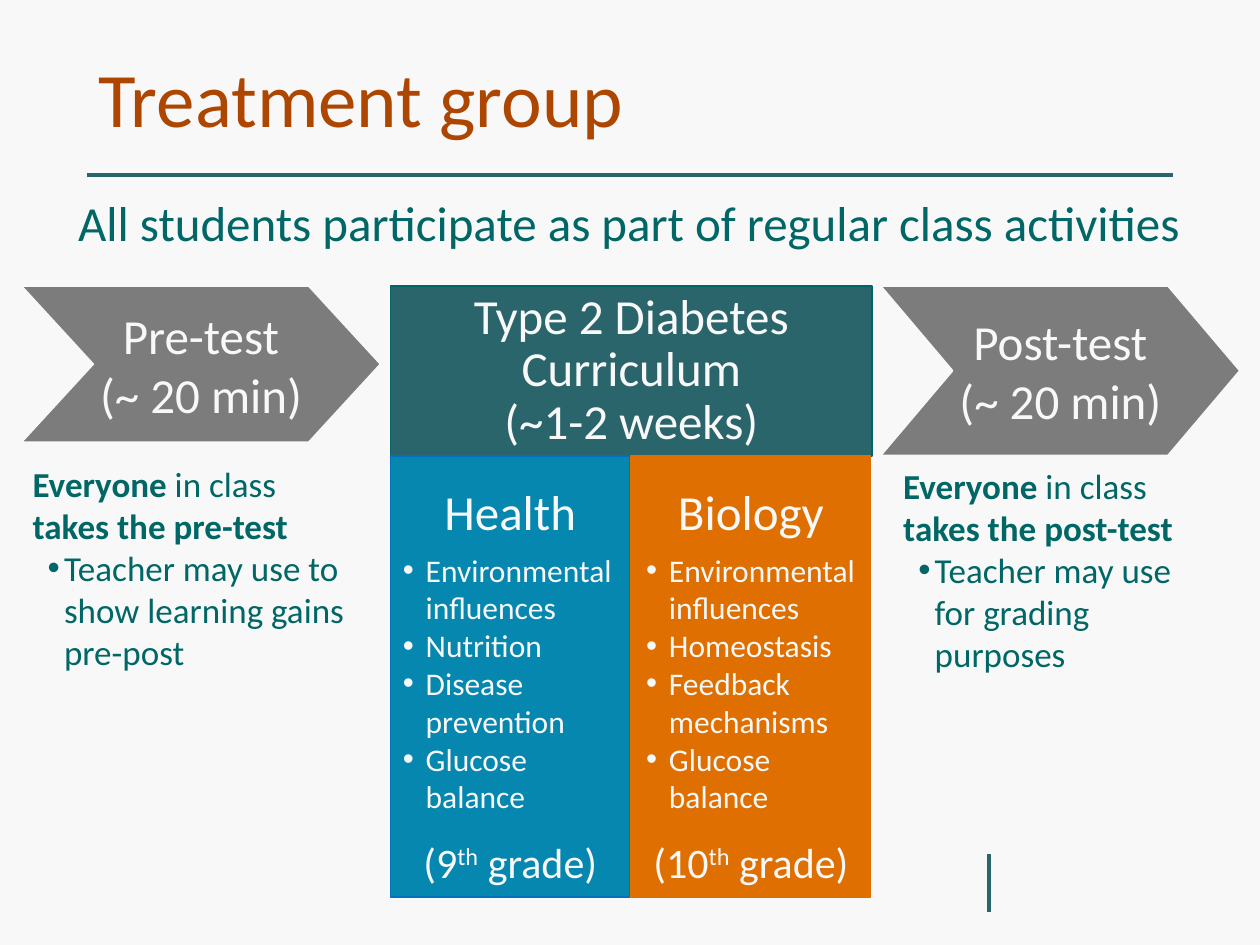
from lxml.etree import SubElement
from pptx import Presentation
from pptx.dml.color import RGBColor
from pptx.enum.shapes import MSO_CONNECTOR, MSO_SHAPE
from pptx.enum.text import MSO_ANCHOR, MSO_AUTO_SIZE, PP_ALIGN
from pptx.oxml.ns import qn
from pptx.util import Pt

TITLE = "Treatment group"
LEAD = "All students participate as part of regular class activities"
HEAD = ["Type 2 Diabetes Curriculum", "(~1-2 weeks)"]
COLS = [
    dict(name="Health", grade="9", fill="blue", edge="navy", pad=7.2, hang=13,
         items=["Environmental influences", "Nutrition",
                "Disease prevention", "Glucose balance"]),
    dict(name="Biology", grade="10", fill="orange", edge="orange", pad=3.6, hang=18,
         items=["Environmental influences", "Homeostasis",
                "Feedback mechanisms", "Glucose balance"]),
]
TESTS = [
    dict(name="Pre-test", left=12.24, high=89.28, note=(11.52, 260.64),
         does="takes the pre-test",
         use="Teacher may use to show learning gains pre-post"),
    dict(name="Post-test", left=503.28, high=96.84, note=(509.04, 262.08),
         does="takes the post-test",
         use="Teacher may use for grading purposes"),
]
TIME = "(~ 20 min)"
RULES = [(565.2, 488.16, 565.2, 521.28), (49.68, 100.08, 670.32, 100.08)]

THEME = dict(
    font="Calibri",
    ink=dict(paper="F8F8F8", rust="AC4600", teal="2B656C", deep="006666",
             blue="0587AF", navy="0070C0", orange="DE6F00", gray="7C7C7C"),
    size=dict(title=44, head=28, grade=24, note=20, item=18),
)
TOP, MID, LEFT = 163.44, 260.64, 223.2
WIDE, COL, STEP, TALL = 275.04, 136.8, 137.52, 252
ARROW, NOTCH = 205.2, 41.04
CENTER = PP_ALIGN.CENTER


def ink(name):
    return RGBColor.from_string(THEME["ink"][name])


def para(runs, size, color, align=PP_ALIGN.LEFT, **more):
    return dict(runs=runs, size=size, color=color, align=align, **more)


def write(shape, paras, anchor=MSO_ANCHOR.TOP, pads=(7.2, 3.6, 7.2, 3.6), fit=MSO_AUTO_SIZE.NONE):
    frame = shape.text_frame
    frame.word_wrap = True
    frame.auto_size = fit
    frame.vertical_anchor = anchor
    frame.margin_left, frame.margin_top, frame.margin_right, frame.margin_bottom = map(Pt, pads)
    for i, item in enumerate(paras):
        p = frame.add_paragraph() if i else frame.paragraphs[0]
        p.alignment = item["align"]
        p.space_before = Pt(item.get("before", 0))
        p.space_after = Pt(item.get("after", 0))
        p.line_spacing = item.get("lead", 1.0)
        if "bullet" in item:
            left, hang = item["bullet"]
            props = p._p.get_or_add_pPr()
            props.set("marL", str(Pt(left)))
            props.set("indent", str(-Pt(hang)))
            SubElement(props, qn("a:buFont"), typeface="Arial")
            SubElement(props, qn("a:buChar"), char="•")
        for text, style in item["runs"]:
            run = p.add_run()
            run.text = text
            run.font.name = THEME["font"]
            run.font.size = Pt(THEME["size"][item["size"]])
            run.font.color.rgb = ink(item["color"])
            run.font.bold = style == "bold"
            if style == "super":
                run._r.get_or_add_rPr().set("baseline", "30000")


def paint(shape, fill, edge):
    shape.shadow.inherit = False
    shape.fill.solid()
    shape.fill.fore_color.rgb = ink(fill)
    shape.line.color.rgb = ink(edge)
    shape.line.width = Pt(1)
    return shape


def block(slide, box, fill, edge):
    return paint(slide.shapes.add_shape(MSO_SHAPE.RECTANGLE, *map(Pt, box)), fill, edge)


def label(slide, box, paras):
    write(slide.shapes.add_textbox(*map(Pt, box)), paras, fit=MSO_AUTO_SIZE.SHAPE_TO_FIT_TEXT)


def rule(slide, ends):
    line = slide.shapes.add_connector(MSO_CONNECTOR.STRAIGHT, *map(Pt, ends))
    line.line.color.rgb = ink("teal")
    line.line.width = Pt(2.25)
    SubElement(line._element.spPr, qn("a:effectLst"))


def arrow(slide, left, high):
    tip, neck, half = left + ARROW, left + ARROW - NOTCH, TOP + high / 2
    pen = slide.shapes.build_freeform(Pt(left), Pt(TOP))
    dots = [(neck, TOP), (tip, half), (neck, TOP + high), (left, TOP + high), (left + NOTCH, half)]
    pen.add_line_segments([(Pt(x), Pt(y)) for x, y in dots], close=True)
    return paint(pen.convert_to_shape(), "gray", "paper")


def course(slide, i, col):
    shape = block(slide, (LEFT + i * STEP, MID, COL, TALL), col["fill"], col["edge"])
    grade = [("(" + col["grade"], ""), ("th", "super"), (" grade)", "")]
    paras = [para([(col["name"], "")], "head", "paper", CENTER, after=6)]
    paras += [para([(text, "")], "item", "paper", bullet=(col["hang"], 13)) for text in col["items"]]
    paras.append(para(grade, "grade", "paper", CENTER, before=12))
    write(shape, paras, pads=(col["pad"], 14.4, col["pad"], 3.6))


def test(slide, item):
    lines = [para([(text, "")], "head", "paper", CENTER) for text in (item["name"], TIME)]
    write(arrow(slide, item["left"], item["high"]), lines, MSO_ANCHOR.MIDDLE, (43.2, 5, 43.2, 5))
    who = [("Everyone", "bold"), (" in class ", ""), (item["does"], "bold")]
    label(slide, (*item["note"], 193.68, 128.16), [
        para(who, "note", "deep"),
        para([(item["use"], "")], "note", "deep", bullet=(18, 9.36)),
    ])


def main():
    deck = Presentation()
    deck.slide_width, deck.slide_height = Pt(720), Pt(540)
    slide = deck.slides.add_slide(deck.slide_layouts[5])
    slide.background.fill.solid()
    slide.background.fill.fore_color.rgb = ink("paper")
    for ends in RULES:
        rule(slide, ends)
    title = slide.shapes.title
    title.left, title.top, title.width, title.height = map(Pt, (48.96, 23.04, 620.64, 71.28))
    write(title, [para([(TITLE, "")], "title", "rust", lead=0.9)], MSO_ANCHOR.MIDDLE)
    head = block(slide, (LEFT, TOP, WIDE, MID - TOP), "teal", "deep")
    write(head, [para([(text, "")], "head", "paper", CENTER, lead=0.9) for text in HEAD],
          MSO_ANCHOR.MIDDLE)
    for i, col in enumerate(COLS):
        course(slide, i, col)
    for item in TESTS:
        test(slide, item)
    label(slide, (30.24, 106.56, 658.08, 41.04), [para([(LEAD, "")], "head", "deep", CENTER)])
    deck.save("out.pptx")


if __name__ == "__main__":
    main()
